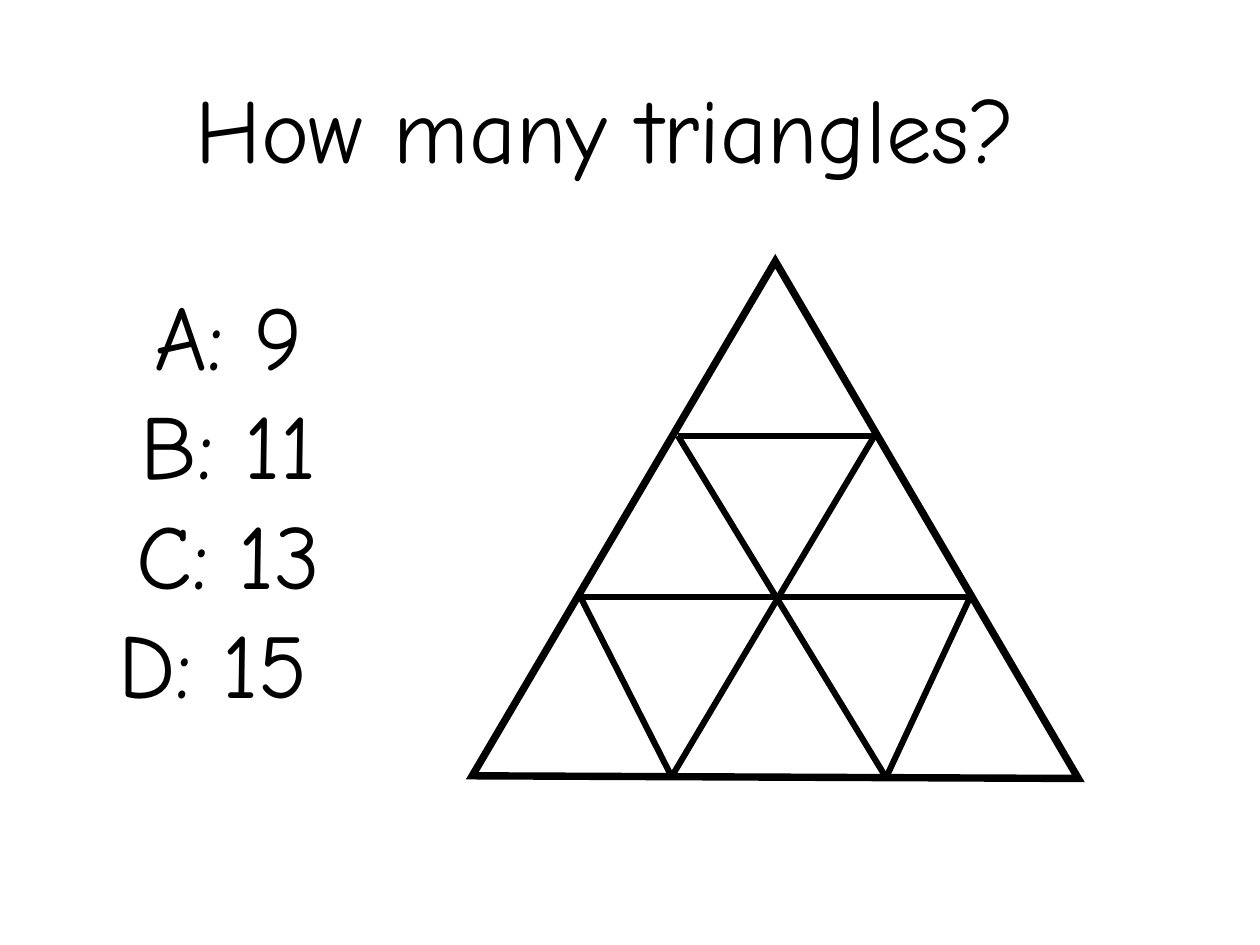
"""Builds a quiz slide that asks how many triangles a divided triangle holds."""
from lxml import etree
from pptx import Presentation
from pptx import util as u
from pptx.dml.color import RGBColor
from pptx.enum import shapes, text
from pptx.oxml.ns import qn

SIZE = (14.22, 10.67)
COLORS = {"ink": "000000", "paper": "FFFFFF"}
FONT = "Comic Neue"
QUESTION = ["How many triangles?"]
ANSWERS = ["A: 9", "B: 11", "C: 13", "D: 15 "]
QUESTION_BOX = (1.87, 0.66, 9.93, 1.56)
ANSWERS_BOX = (1.14, 2.68, 2.88, 5.89)

CORNERS = [(8.75, 2.95), (12.17, 8.79), (5.33, 8.76)]
JOINTS = {
    "upper left": (7.65, 4.92), "upper right": (9.87, 4.92),
    "middle left": (6.55, 6.74), "middle right": (10.95, 6.74),
    "base left": (7.58, 8.77), "base right": (10, 8.78),
}
DIVIDERS = [
    ("upper left", "upper right"), ("middle left", "middle right"),
    ("upper left", "base right"), ("middle left", "base left"),
    ("upper right", "base left"), ("middle right", "base right"),
]


def inches(values):
    return [u.Inches(value) for value in values]


def color(name):
    return RGBColor.from_string(COLORS[name])


def write(holder, lines, *, box, size=74, ink="ink", align=text.PP_ALIGN.CENTER):
    holder.left, holder.top, holder.width, holder.height = inches(box)
    frame = holder.text_frame
    frame.word_wrap = True
    frame.auto_size = text.MSO_AUTO_SIZE.NONE
    frame.vertical_anchor = text.MSO_ANCHOR.MIDDLE
    frame.margin_left = frame.margin_right = u.Inches(0.06)
    frame.margin_top = frame.margin_bottom = u.Inches(0.06)
    for index, line in enumerate(lines):
        paragraph = frame.add_paragraph() if index else frame.paragraphs[0]
        paragraph.alignment = align
        run = paragraph.add_run()
        run.text = line
        run.font.name, run.font.size = FONT, u.Pt(size)
        run.font.color.rgb = color(ink)


def stroke(part, width):
    part.line.color.rgb = color("ink")
    part.line.width = u.Pt(width)


def main():
    deck = Presentation()
    deck.slide_width, deck.slide_height = inches(SIZE)
    slide = deck.slides.add_slide(deck.slide_layouts[5])
    slide.background.fill.solid()
    slide.background.fill.fore_color.rgb = color("paper")
    write(slide.shapes.title, QUESTION, box=QUESTION_BOX)

    apex, *base = [inches(corner) for corner in CORNERS]
    builder = slide.shapes.build_freeform(*apex)
    builder.add_line_segments(base, close=True)
    triangle = builder.convert_to_shape()
    triangle.shadow.inherit = False
    triangle.fill.background()
    stroke(triangle, 6)
    etree.SubElement(triangle.line._get_or_add_ln(), qn("a:miter"), lim="800000")

    for start, end in DIVIDERS:
        divider = slide.shapes.add_connector(
            shapes.MSO_CONNECTOR.STRAIGHT, *inches(JOINTS[start] + JOINTS[end]))
        stroke(divider, 5)
        etree.SubElement(divider._element.spPr, qn("a:effectLst"))

    write(slide.shapes.add_textbox(*inches(ANSWERS_BOX)), ANSWERS, box=ANSWERS_BOX)
    deck.save("out.pptx")


if __name__ == "__main__":
    main()
